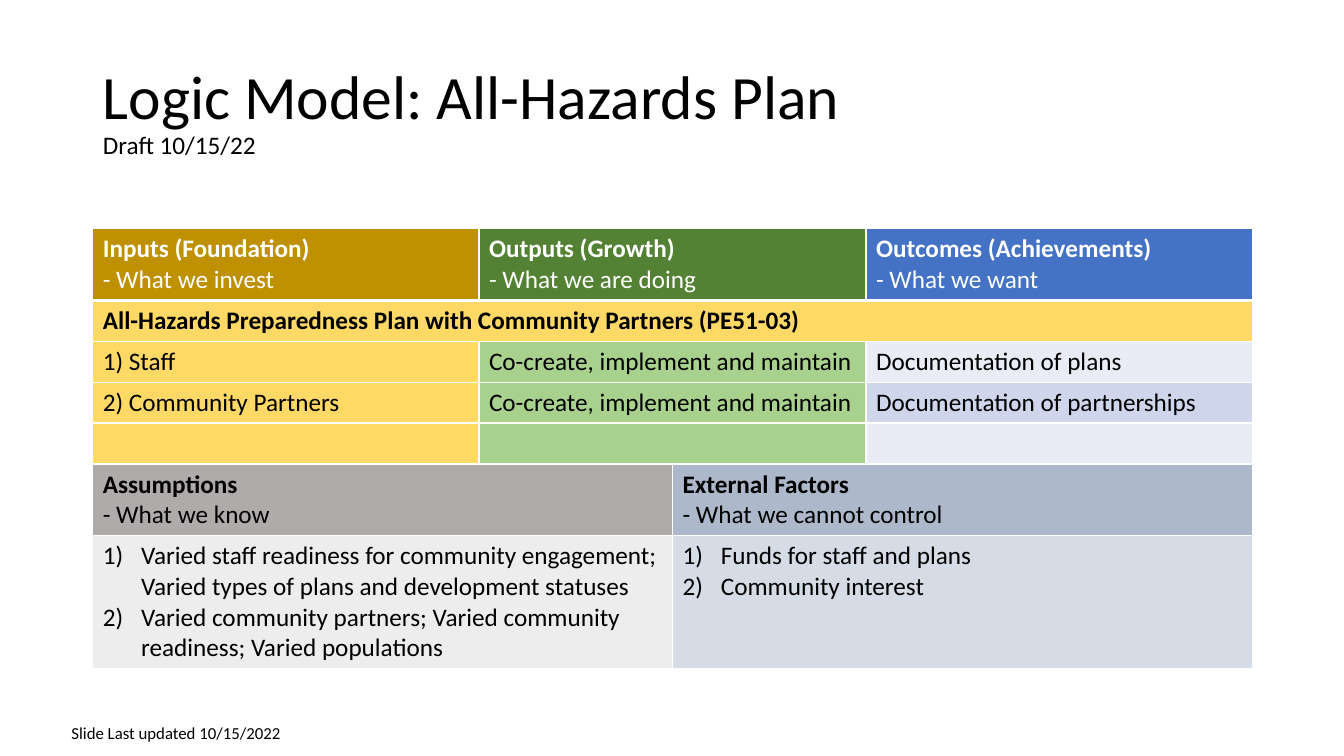
from dataclasses import dataclass

from lxml.etree import SubElement
from pptx import Presentation
from pptx.dml.color import RGBColor
from pptx.enum.text import MSO_ANCHOR as Anchor, MSO_AUTO_SIZE as AutoSize, PP_ALIGN as Align
from pptx.oxml.ns import qn
from pptx.util import Inches, Pt

FONT = "Calibri"
BLACK, WHITE = "000000", "FFFFFF"
COLUMN_WIDTHS = (3.83, 1.92, 1.92, 3.83)
ROW_HEIGHTS = (0.7, 0.4, 0.4, 0.4, 0.4, 0.7, 1.3)


@dataclass
class Block:
    """A table cell; a heading has its first line in bold."""
    text: str
    fill: str
    columns: int = 1
    heading: bool = False
    numbered: bool = False
    color: str = BLACK


# "\v" breaks a line inside a paragraph, "\n" starts a new paragraph
ROWS: list[list[Block]] = [
    [Block("Inputs (Foundation)\v- What we invest", "BF9000", heading=True, color=WHITE),
     Block("Outputs (Growth)\v- What we are doing", "548235", 2, heading=True, color=WHITE),
     Block("Outcomes (Achievements)\n- What we want", "4472C4", heading=True, color=WHITE)],
    [Block("All-Hazards Preparedness Plan with Community Partners (PE51-03)", "FFD966", 4,
           heading=True)],
    [Block("1) Staff", "FFD966"),
     Block("Co-create, implement and maintain", "A9D18E", 2),
     Block("Documentation of plans", "E9EBF5")],
    [Block("2) Community Partners", "FFD966"),
     Block("Co-create, implement and maintain", "A9D18E", 2),
     Block("Documentation of partnerships", "CFD5EA")],
    [Block("", "FFD966"), Block("", "A9D18E", 2), Block("", "E9EBF5")],
    [Block("Assumptions\v- What we know", "AFABAB", 2, heading=True),
     Block("External Factors\n- What we cannot control", "ADB9CA", 2, heading=True)],
    [Block("Varied staff readiness for community engagement; "
           "Varied types of plans and development statuses\n"
           "Varied community partners; Varied community readiness; Varied populations",
           "EDEDED", 2, numbered=True),
     Block("Funds for staff and plans\nCommunity interest", "D6DCE5", 2, numbered=True)],
]


def rgb(value: str) -> RGBColor:
    return RGBColor.from_string(value)


def spans_of(frame) -> list:
    return [span for para in frame.paragraphs for span in para.runs]


def style_span(span, size: float, color: str = BLACK, bold: bool = False) -> None:
    span.font.name = FONT
    span.font.size = Pt(size)
    span.font.bold = bold
    span.font.color.rgb = rgb(color)


def set_borders(cell, bottom: float) -> None:
    properties = cell._tc.get_or_add_tcPr()
    for side, width in (("lnL", 1), ("lnR", 1), ("lnT", 1), ("lnB", bottom)):
        line = SubElement(properties, qn(f"a:{side}"), w=str(Pt(width)))
        SubElement(SubElement(line, qn("a:solidFill")), qn("a:srgbClr"), val=WHITE)


def number_paragraph(para) -> None:
    properties = para._p.get_or_add_pPr()
    properties.set("marL", str(Inches(0.38)))
    properties.set("indent", str(Inches(-0.38)))
    SubElement(properties, qn("a:buFont"), typeface="+mj-lt")
    SubElement(properties, qn("a:buAutoNum"), type="arabicParenR")


def fill_cell(cell, block: Block) -> None:
    cell.fill.solid()
    cell.fill.fore_color.rgb = rgb(block.fill)
    cell.text_frame.text = block.text
    for index, span in enumerate(spans_of(cell.text_frame)):
        style_span(span, 18, block.color, block.heading and index == 0)
    if block.numbered:
        for para in cell.text_frame.paragraphs:
            number_paragraph(para)


def add_title(page) -> None:
    title = page.shapes.title
    title.left, title.top = Inches(0.92), Inches(0.4)
    title.width, title.height = Inches(11.5), Inches(1.45)
    frame = title.text_frame
    frame.vertical_anchor = Anchor.MIDDLE
    frame.auto_size = AutoSize.NONE
    para = frame.paragraphs[0]
    para.text = "Logic Model: All-Hazards Plan\vDraft 10/15/22"
    para.alignment = Align.LEFT
    para.line_spacing = 0.9
    for span, size in zip(para.runs, (44, 18)):
        style_span(span, size)


def add_logic_model(page) -> None:
    table = page.shapes.add_table(
        len(ROW_HEIGHTS), len(COLUMN_WIDTHS),
        Inches(0.92), Inches(2.27), Inches(11.5), Inches(4.3)).table
    for column, width in zip(table.columns, COLUMN_WIDTHS):
        column.width = Inches(width)
    for row, height in zip(table.rows, ROW_HEIGHTS):
        row.height = Inches(height)
    for row_index, blocks in enumerate(ROWS):
        for cell in table.rows[row_index].cells:
            set_borders(cell, bottom=3 if row_index == 0 else 1)
        start = 0
        for block in blocks:
            cell = table.cell(row_index, start)
            if block.columns > 1:
                cell.merge(table.cell(row_index, start + block.columns - 1))
            fill_cell(cell, block)
            start += block.columns


def add_update_note(page) -> None:
    box = page.shapes.add_textbox(Inches(0.61), Inches(7.12), Inches(4.02), Inches(0.3))
    frame = box.text_frame
    frame.word_wrap = True
    frame.auto_size = AutoSize.SHAPE_TO_FIT_TEXT
    frame.text = "Slide Last updated 10/15/2022"
    style_span(frame.paragraphs[0].runs[0], 12)


def main() -> None:
    deck = Presentation()
    deck.slide_width, deck.slide_height = Inches(13.33), Inches(7.5)
    page = deck.slides.add_slide(deck.slide_layouts[5])
    add_title(page)
    add_logic_model(page)
    add_update_note(page)
    deck.save("out.pptx")


if __name__ == "__main__":
    main()
